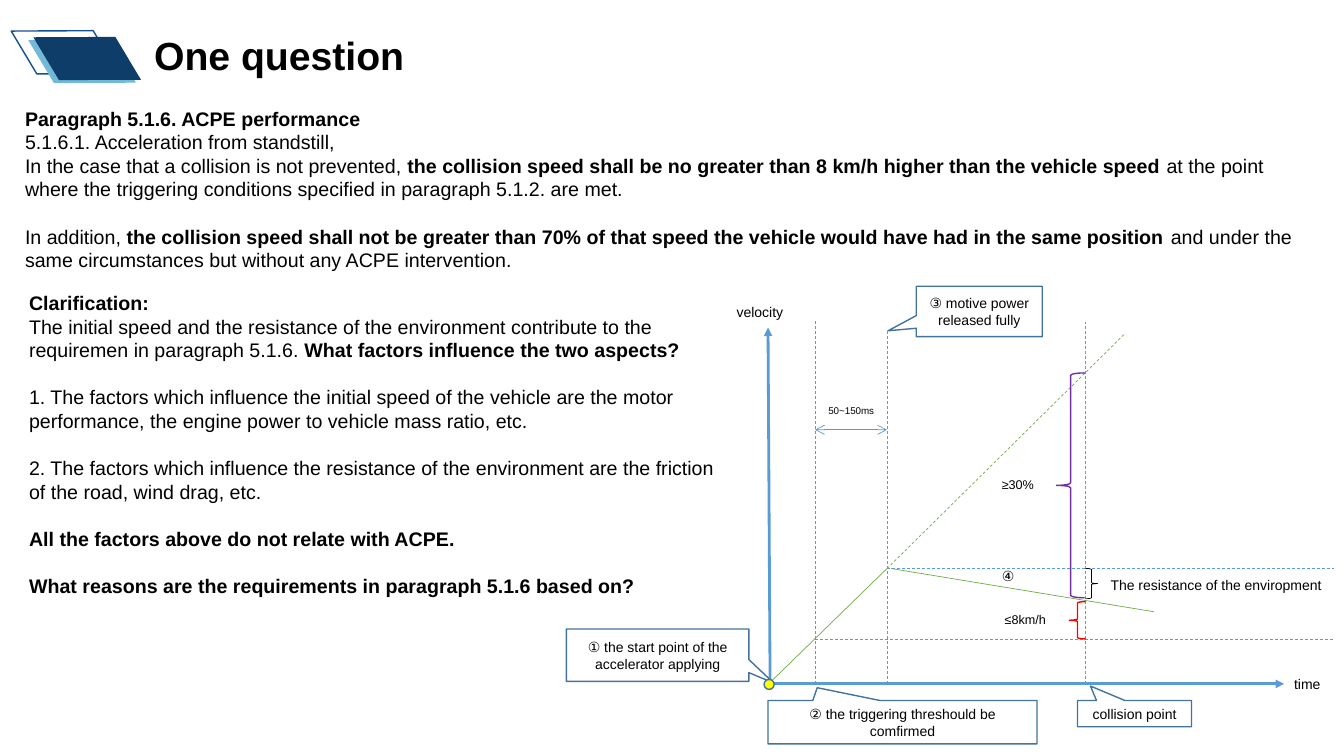
"""Build the slide that asks one question about ACPE performance."""
from lxml.etree import SubElement
from pptx import Presentation
from pptx.dml.color import RGBColor
from pptx.enum.dml import MSO_LINE_DASH_STYLE as Dash
from pptx.enum.shapes import MSO_CONNECTOR as Connector, MSO_SHAPE as Shape
from pptx.enum.text import MSO_ANCHOR as Anchor, PP_ALIGN as Align
from pptx.oxml.ns import qn
from pptx.util import Pt

BLUE, EDGE, GREEN = "5B9BD5", "43739E", "70AD47"
RELEASE_X, THRESHOLD_X, COLLISION_X = 633.6, 582.2, 775
RELEASE_Y, THRESHOLD_Y, AXIS_Y = 406.1, 456.8, 488.5

REQUIREMENT = [
    ["*Paragraph 5.1.6. ACPE performance*",
     "5.1.6.1. Acceleration from standstill,",
     "In the case that a collision is not prevented,* the collision speed shall be no greater "
     "than 8 km/h higher than the vehicle speed* at the point where the triggering conditions "
     "specified in paragraph 5.1.2. are met."],
    ["In addition, *the collision speed shall not be greater than 70% of that speed the vehicle "
     "would have had in the same position *and under the same circumstances but without any "
     "ACPE intervention."],
]
CLARIFICATION = [
    ["*Clarification:*",
     "The initial speed and the resistance of the environment contribute to the requiremen in "
     "paragraph 5.1.6. *What factors influence the two aspects?*"],
    ["1. The factors which influence the initial speed of the vehicle are the motor "
     "performance, the engine power to vehicle mass ratio, etc."],
    ["2. The factors which influence the resistance of the environment are the friction of "
     "the road, wind drag, etc."],
    ["*All the factors above do not relate with ACPE.*"],
    ["*What reasons are the requirements in paragraph 5.1.6 based on?*"],
]


def color(code):
    return RGBColor.from_string(code)


def write(frame, groups, size=10, align=Align.LEFT, leading=None, font="Arial"):
    """Fill a frame with groups of paragraphs; asterisks enclose bold words."""
    para = None
    for group in groups:
        for position, text in enumerate(group):
            first = para is None
            para = frame.paragraphs[0] if first else frame.add_paragraph()
            para.alignment = align
            if leading:
                para.line_spacing = Pt(leading)
                if position == 0 and not first:
                    para.space_before = Pt(leading)
            for index, words in enumerate(text.split("*")):
                if words:
                    span = para.add_run()
                    span.text = words
                    span.font.name, span.font.size = font, Pt(size)
                    span.font.bold = index % 2 == 1
                    span.font.color.rgb = color("000000")


class Canvas:
    """Draw styled elements on the current slide."""

    def __init__(self, page):
        self.shapes = page.shapes

    def text(self, left, top, width, height, groups, wrap=True, **style):
        box = self.shapes.add_textbox(Pt(left), Pt(top), Pt(width), Pt(height))
        box.text_frame.word_wrap = wrap
        write(box.text_frame, groups, **style)

    def label(self, left, top, width, text, **style):
        self.text(left, top, width, 19.4, [[text]], wrap=False, **style)

    def shape(self, kind, left, top, width, height, fill=None, line=None, weight=1, adjust=()):
        shape = self.shapes.add_shape(kind, Pt(left), Pt(top), Pt(width), Pt(height))
        shape.shadow.inherit = False
        for index, value in enumerate(adjust):
            shape.adjustments[index] = value
        if fill:
            shape.fill.solid()
            shape.fill.fore_color.rgb = color(fill)
        else:
            shape.fill.background()
        if line:
            shape.line.color.rgb = color(line)
            shape.line.width = Pt(weight)
        else:
            shape.line.fill.background()
        return shape

    def callout(self, left, top, width, height, text, tip):
        box = self.shape(Shape.RECTANGULAR_CALLOUT, left, top, width, height,
                         line=EDGE, adjust=tip)
        box.text_frame.word_wrap = True
        box.text_frame.vertical_anchor = Anchor.MIDDLE
        write(box.text_frame, [[text]], align=Align.CENTER)

    def line(self, start, end, tint=BLUE, weight=0.5, dashed=False, head=None, tail=None):
        line = self.shapes.add_connector(Connector.STRAIGHT, *map(Pt, start + end))
        line.line.color.rgb = color(tint)
        line.line.width = Pt(weight)
        if dashed:
            line.line.dash_style = Dash.DASH
        stroke = line.line._get_or_add_ln()
        for tag, kind in (("a:headEnd", head), ("a:tailEnd", tail)):
            if kind:
                SubElement(stroke, qn(tag), type=kind)
        SubElement(line._element.spPr, qn("a:effectLst"))


def draw_header(canvas):
    for left, top, fill, line in ((13.7, 12.2, None, "144F91"),
                                  (25.9, 18.7, "72B9D8", None),
                                  (29.5, 16.6, "0F3D69", None)):
        badge = canvas.shape(Shape.PARALLELOGRAM, left, top, 65.5, 50.4, fill, line,
                             adjust=[0.592])
        badge.rotation = 59.1
    canvas.text(103, 18.7, 285, 41, [["*One question*"]], size=28, leading=33.6)


def draw_diagram(canvas):
    release = (RELEASE_X, RELEASE_Y)
    canvas.line((547.9, 489.6), release, GREEN)
    for x, top in ((RELEASE_X, 236.2), (THRESHOLD_X, 229), (COLLISION_X, 229.7)):
        canvas.line((x, AXIS_Y), (x, top), dashed=True)
    for x, y in ((THRESHOLD_X, THRESHOLD_Y), release):
        canvas.line((x, y), (953, y), dashed=True)
    canvas.line(release, (802.8, 239), GREEN, dashed=True)
    canvas.line((636.5, RELEASE_Y), (824.4, 437), GREEN)
    canvas.line((THRESHOLD_X, 307), (RELEASE_X, 307), head="arrow", tail="arrow")
    canvas.line((546.5, AXIS_Y), (917.3, AXIS_Y), weight=2, tail="triangle")
    canvas.line((550.1, 492.5), (548.6, 234), weight=2, tail="triangle")

    canvas.callout(548.6, 500.4, 192.2, 31, "② the triggering threshould be comfirmed",
                   (-0.317, -0.796))
    canvas.callout(769.7, 500.4, 81.4, 18.7, "collision point", (-0.386, -1.053))
    canvas.callout(654.5, 204.5, 90, 36, "③ motive power released fully", (-0.724, 0.384))
    canvas.callout(404.6, 449.3, 130.3, 37.4,
                   "① the start point of the accelerator applying", (0.636, 0.532))
    canvas.shape(Shape.OVAL, 545.8, 485.3, 7.2, 7.2, "FFFF00", EDGE)

    canvas.shape(Shape.RIGHT_BRACE, 775.4, RELEASE_Y, 8.6, 21.6, line="000000", weight=0.5)
    canvas.shape(Shape.LEFT_BRACE, 754.6, 266.4, 20.2, 160.6, line="7030A0")
    canvas.shape(Shape.LEFT_BRACE, 763.9, 429.8, 11.5, 26.6, line="FF0000")

    canvas.label(583.9, 285.8, 48.2, "50~150ms", size=7, align=Align.CENTER)
    canvas.label(786.2, 408.2, 167.8, "The resistance of the enviropment")
    canvas.label(519.1, 213.1, 51.1, "velocity")
    canvas.label(917.3, 478.8, 37.4, "time")
    canvas.label(708.5, 401.8, 28.1, "④")
    canvas.label(708.5, 337, 41.8, "≥30%", size=9)
    canvas.label(710.6, 433.4, 49, "≤8km/h", size=9)


def main():
    deck = Presentation()
    deck.slide_width, deck.slide_height = Pt(960), Pt(540)
    page = deck.slides.add_slide(deck.slide_layouts[6])
    canvas = Canvas(page)
    draw_header(canvas)
    canvas.text(10.8, 72.7, 938.9, 126, REQUIREMENT, size=14, leading=16.8)
    canvas.text(13.7, 204.5, 506.2, 227.5, CLARIFICATION, size=14, leading=16.8)
    draw_diagram(canvas)
    deck.save("out.pptx")


if __name__ == "__main__":
    main()
